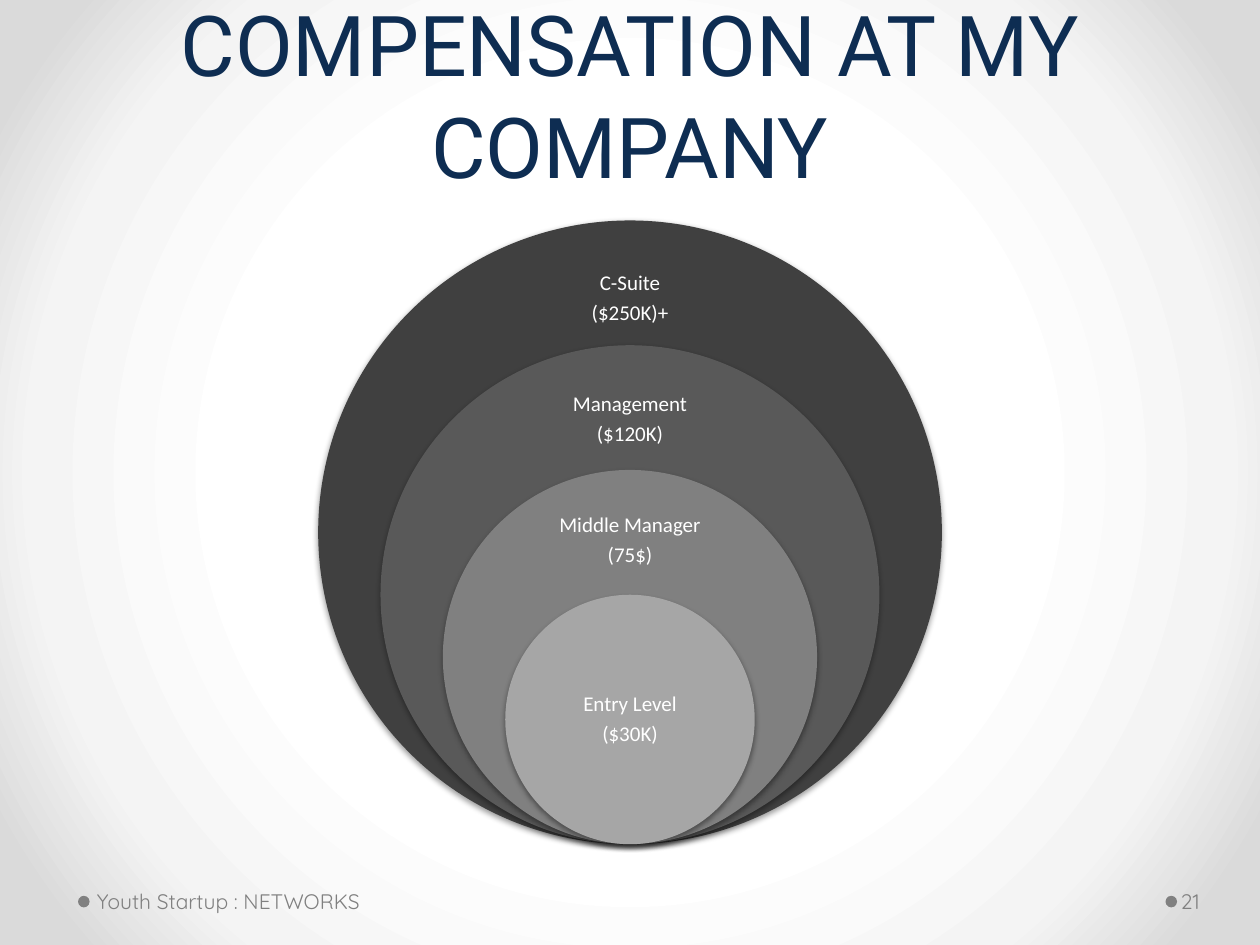
from dataclasses import dataclass
from lxml.etree import SubElement
from pptx import Presentation
from pptx.dml.color import RGBColor
from pptx.enum.shapes import MSO_SHAPE
from pptx.enum.text import MSO_ANCHOR, PP_ALIGN
from pptx.oxml.ns import qn
from pptx.util import Pt


@dataclass(frozen=True)
class Theme:
    navy: str = "0E2D52"
    white: str = "FFFFFF"
    grey: str = "808080"
    rings: tuple = ("404040", "595959", "808080", "A6A6A6")
    backdrop: tuple = ((50, "FFFFFF"), (76, "F4F4F4"), (92, "DADADA"))
    title_font: str = "Roboto"
    label_font: str = "Calibri"
    footer_font: str = "Quicksand"
    title_size: int = 48
    body_size: int = 12


class SlideBuilder:
    def __init__(self, s, theme):
        self.s = s
        self.theme = theme

    def background(self):
        """Circular gradient, light in the centre."""
        self.s.background.fill.solid()
        bg = self.s._element.find(".//" + qn("p:bgPr"))
        bg.remove(bg[0])
        grad = bg.makeelement(qn("a:gradFill"), {"rotWithShape": "1"})
        bg.insert(0, grad)
        stops = SubElement(grad, qn("a:gsLst"))
        for pos, color in self.theme.backdrop:
            gs = SubElement(stops, qn("a:gs"), pos=str(pos * 1000))
            SubElement(gs, qn("a:srgbClr"), val=color)
        circle = SubElement(grad, qn("a:path"), {"path": "circle"})
        SubElement(circle, qn("a:fillToRect"), l="50000", t="50000", r="50000", b="50000")

    def circle(self, x, y, d, color):
        sp = self.s.shapes.add_shape(MSO_SHAPE.OVAL, Pt(x), Pt(y), Pt(d), Pt(d))
        sp.shadow.inherit = False
        sp.fill.solid()
        sp.fill.fore_color.rgb = RGBColor.from_string(color)
        sp.line.fill.background()
        return sp

    def drop_shadow(self, sp):
        effects = sp._element.spPr.find(qn("a:effectLst"))
        shadow = SubElement(effects, qn("a:outerShdw"), blurRad=str(Pt(3.1)),
                            dist=str(Pt(1.6)), dir="5400000", rotWithShape="0")
        black = SubElement(shadow, qn("a:srgbClr"), val="000000")
        SubElement(black, qn("a:alpha"), val="38000")

    def text(self, x, y, w, h, text, font, size, color, align=PP_ALIGN.LEFT,
             anchor=MSO_ANCHOR.MIDDLE, inset=0, spacing=None, after=0):
        tf = self.s.shapes.add_textbox(Pt(x), Pt(y), Pt(w), Pt(h)).text_frame
        tf.word_wrap = True
        tf.vertical_anchor = anchor
        tf.margin_left = tf.margin_right = Pt(inset)
        tf.margin_top = tf.margin_bottom = 0
        tf.text = text
        for p in tf.paragraphs:
            p.alignment = align
            p.line_spacing = spacing
            p.space_after = Pt(after)
            for r in p.runs:
                r.font.name = font
                r.font.size = Pt(size)
                r.font.color.rgb = RGBColor.from_string(color)

    def title(self, text):
        t = self.theme
        self.text(36, 10.8, 648, 100.8, text, t.title_font, t.title_size, t.navy,
                  PP_ALIGN.CENTER, MSO_ANCHOR.BOTTOM, inset=7.2, spacing=Pt(58))

    def ring(self, d, color, label, label_mid):
        """Circle resting on the common base, with its label label_mid below its top."""
        t = self.theme
        center, base, label_w, label_h = 360, 482.4, 140, 40
        top = base - d
        sp = self.circle(center - d / 2, top, d, color)
        self.drop_shadow(sp)
        self.text(center - label_w / 2, top + label_mid - label_h / 2, label_w, label_h,
                  label, t.label_font, t.body_size, t.white, PP_ALIGN.CENTER,
                  spacing=0.9, after=4.2)

    def footer(self, dot_x, x, w, text, inset):
        t = self.theme
        self.circle(dot_x, 511.9, 6.6, t.grey)
        self.text(x, 500.4, w, 28.8, text, t.footer_font, t.body_size, t.grey, inset=inset)


def main():
    prs = Presentation()
    prs.slide_width, prs.slide_height = Pt(720), Pt(540)
    theme = Theme()
    slide = SlideBuilder(prs.slides.add_slide(prs.slide_layouts[6]), theme)

    # Backdrop and title
    slide.background()
    slide.title("COMPENSATION AT MY COMPANY")

    # Nested pay levels, each one step smaller
    step = 71.28
    levels = (("C-Suite\n($250K)+", 44.6), ("Management\n($120K)", 42.8),
              ("Middle Manager\n(75$)", 40.3), ("Entry Level\n($30K)", step))
    for i, (label, label_mid) in enumerate(levels):
        slide.ring((5 - i) * step, theme.rings[i], label, label_mid)

    # Footer and slide number
    slide.footer(44.6, 51.8, 224, "Youth Startup : NETWORKS", 3.6)
    slide.footer(666, 672.5, 44, "21", 2.2)

    prs.save("out.pptx")


if __name__ == "__main__":
    main()
